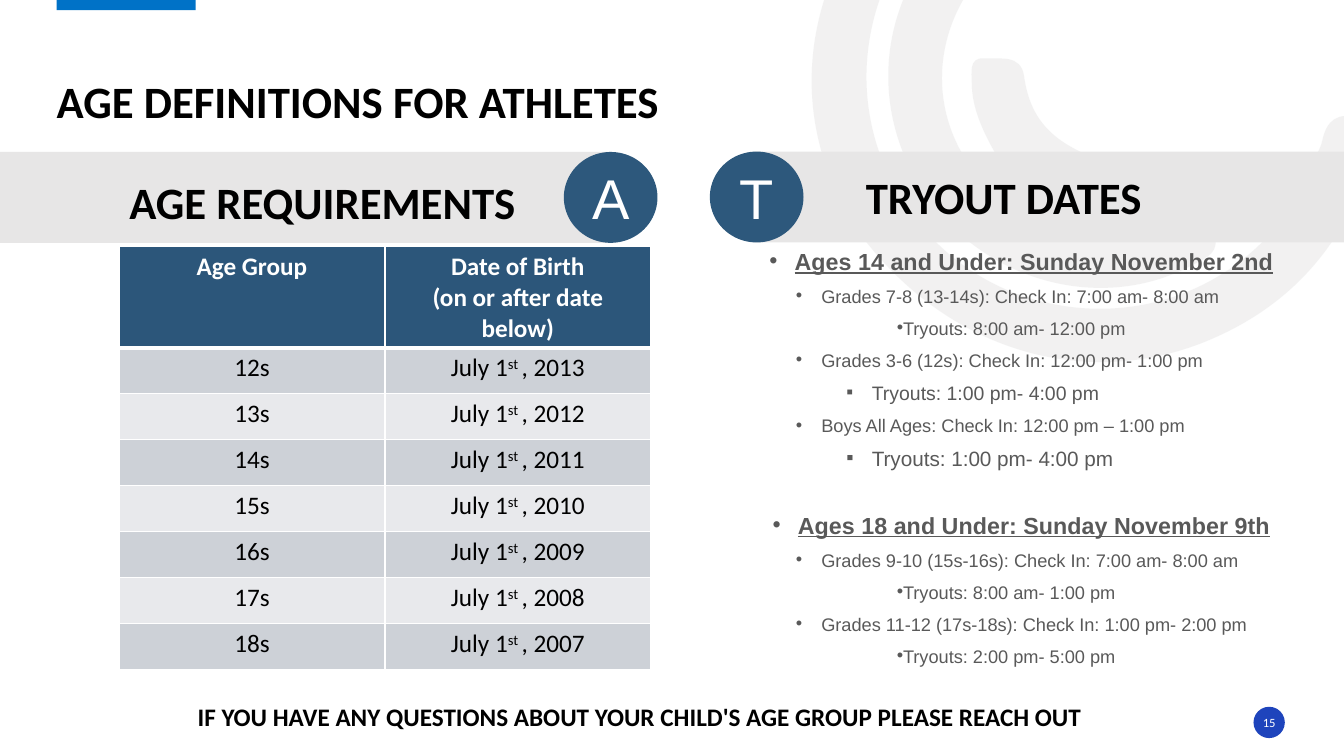
from lxml import etree
from pptx import Presentation
from pptx.dml.color import RGBColor
from pptx.enum.shapes import MSO_SHAPE
from pptx.enum.text import MSO_ANCHOR, PP_ALIGN
from pptx.oxml.ns import qn
from pptx.util import Cm, Pt

RECTANGLE, OVAL = MSO_SHAPE.RECTANGLE, MSO_SHAPE.OVAL
LEFT, CENTER = PP_ALIGN.LEFT, PP_ALIGN.CENTER
TOP, MIDDLE, BOTTOM = MSO_ANCHOR.TOP, MSO_ANCHOR.MIDDLE, MSO_ANCHOR.BOTTOM

BLACK = RGBColor(0x00, 0x00, 0x00)
WHITE = RGBColor(0xFF, 0xFF, 0xFF)
LIGHT_GREY = RGBColor(0xE7, 0xE6, 0xE6)
TEXT_GREY = RGBColor(0x59, 0x59, 0x59)
ACCENT_BLUE = RGBColor(0x00, 0x72, 0xC7)
NUMBER_BLUE = RGBColor(0x1E, 0x44, 0xBC)
BADGE_BLUE = RGBColor(0x2D, 0x58, 0x7C)
HEADER_BLUE = RGBColor(0x2C, 0x56, 0x7A)
ROW_FILLS = (RGBColor(0xCD, 0xD1, 0xD7), RGBColor(0xE8, 0xE9, 0xEC))

# Start point, then cubic curves as (control, control, end), in centimetres
OUTER_RING = ((21.62, 5.82), [
    ((20.29, 3.78), (19.99, 1.27), (21.29, -1.27)),
    ((22.61, -3.86), (24.79, -5.16), (27.69, -5.26)),
    ((28.07, -5.26), (28.47, -5.33), (28.73, -4.95)),
    ((29.06, -4.45), (28.63, -3.91), (27.89, -3.91)),
    ((24.56, -3.91), (21.97, -1.5), (21.84, 1.73)),
    ((21.74, 4.6), (23.77, 7.14), (26.57, 7.67)),
    ((29.46, 8.23), (32.26, 6.63), (33.2, 3.86)),
    ((33.25, 3.76), (33.3, 3.66), (33.32, 3.56)),
    ((33.43, 3.02), (33.71, 2.82), (34.26, 2.97)),
    ((34.87, 3.15), (34.72, 3.58), (34.57, 3.96)),
    ((33.88, 6.22), (32.46, 7.8), (30.25, 8.66)),
    ((27.18, 9.83), (23.77, 8.76), (21.62, 5.82))])
INNER_RING = ((23.42, 5.05), [
    ((21.89, 2.92), (22.07, 0.18), (23.88, -1.73)),
    ((24.16, -2.01), (24.43, -2.41), (24.89, -1.98)),
    ((25.27, -1.63), (25.32, -1.27), (24.87, -0.81)),
    ((23.5, 0.66), (23.37, 2.74), (24.51, 4.27)),
    ((25.6, 5.82), (27.64, 6.32), (29.49, 5.46)),
    ((30.02, 5.21), (30.3, 5.38), (30.56, 5.82)),
    ((30.81, 6.35), (30.4, 6.5), (30.05, 6.68)),
    ((27.84, 7.87), (24.97, 7.16), (23.42, 5.05))])
CORE = ((25.07, 3.84), [
    ((24.77, 3.3), (24.49, 2.72), (24.49, 2.08)),
    ((24.49, 1.85), (24.41, 1.45), (24.79, 1.47)),
    ((25.2, 1.5), (25.73, 1.35), (25.81, 1.93)),
    ((25.93, 2.79), (26.31, 3.35), (27.1, 3.76)),
    ((27.64, 3.99), (27.33, 4.47), (27.23, 4.8)),
    ((27.13, 5.23), (26.8, 5.03), (26.54, 4.93)),
    ((25.93, 4.75), (25.48, 4.32), (25.07, 3.84))])

# Bullet styles: level, left margin, indent, bullet, alignment
DAY = (0, Cm(0.64), Cm(-0.64), "•", CENTER)
GRADES = (1, Cm(1.91), Cm(-0.64), "•", LEFT)
SESSION = (1, Cm(2.54), Cm(1.27), "•", LEFT)
SQUARE_SESSION = (2, Cm(3.18), Cm(-0.64), "▪", LEFT)
DAY_SIZE, DETAIL_SIZE = 16.65, 12.95
SPACE_AFTER, DAY_GAP = 12, 34.8
TRYOUTS = [
    (DAY, DAY_SIZE, "Ages 14 and Under: Sunday November 2nd", SPACE_AFTER),
    (GRADES, DETAIL_SIZE, "Grades 7-8 (13-14s): Check In: 7:00 am- 8:00 am", SPACE_AFTER),
    (SESSION, DETAIL_SIZE, "Tryouts: 8:00 am- 12:00 pm", SPACE_AFTER),
    (GRADES, DETAIL_SIZE, "Grades 3-6 (12s): Check In: 12:00 pm- 1:00 pm", SPACE_AFTER),
    (SQUARE_SESSION, 13.9, "Tryouts: 1:00 pm- 4:00 pm", SPACE_AFTER),
    (GRADES, DETAIL_SIZE, "Boys All Ages: Check In: 12:00 pm – 1:00 pm", SPACE_AFTER),
    (SQUARE_SESSION, 14.8, "Tryouts: 1:00 pm- 4:00 pm", DAY_GAP),
    (DAY, DAY_SIZE, "Ages 18 and Under: Sunday November 9th", SPACE_AFTER),
    (GRADES, DETAIL_SIZE, "Grades 9-10 (15s-16s): Check In: 7:00 am- 8:00 am", SPACE_AFTER),
    (SESSION, DETAIL_SIZE, "Tryouts: 8:00 am- 1:00 pm", SPACE_AFTER),
    (GRADES, DETAIL_SIZE, "Grades 11-12 (17s-18s): Check In: 1:00 pm- 2:00 pm", SPACE_AFTER),
    (SESSION, DETAIL_SIZE, "Tryouts: 2:00 pm- 5:00 pm", SPACE_AFTER),
]


def set_font(font, size, color, bold=False, name="Calibri"):
    font.name, font.size, font.bold = name, Pt(size), bold
    font.color.rgb = color


def write(frame, text, size, color, bold=False, name="Calibri",
          align=LEFT, anchor=MIDDLE, spacing=None):
    """Fill a text frame, without insets, with one paragraph."""
    frame.word_wrap = True
    frame.vertical_anchor = anchor
    frame.margin_left = frame.margin_top = frame.margin_right = frame.margin_bottom = 0
    para = frame.paragraphs[0]
    para.text, para.alignment, para.line_spacing = text, align, spacing
    set_font(para.font, size, color, bold, name)


def paint(shape, color):
    """Give a shape a flat fill with no line or shadow."""
    shape.shadow.inherit = False
    shape.fill.solid()
    shape.fill.fore_color.rgb = color
    shape.line.fill.background()


def add_plain_shape(slide, kind, box, color):
    shape = slide.shapes.add_shape(kind, *box)
    paint(shape, color)
    return shape


def add_heading(slide, box, text):
    write(slide.shapes.add_textbox(*box).text_frame, text, 32, BLACK, True,
          anchor=BOTTOM, spacing=0.9)


def add_backdrop_curve(slide, start, curves):
    """Draw a closed, half-transparent outline from cubic curves."""
    builder = slide.shapes.build_freeform(Cm(start[0]), Cm(start[1]))
    builder.add_line_segments([(Cm(x), Cm(y)) for curve in curves for x, y in curve])
    shape = builder.convert_to_shape()
    paint(shape, LIGHT_GREY)
    properties = shape._element.spPr
    etree.SubElement(properties.find(qn("a:solidFill"))[0], qn("a:alpha"), val="53000")
    outline = next(properties.iter(qn("a:path")))
    segments = outline.findall(qn("a:lnTo"))
    for first in range(0, len(segments), 3):
        curve = etree.SubElement(outline, qn("a:cubicBezTo"))
        for segment in segments[first:first + 3]:
            curve.append(segment[0])
            outline.remove(segment)
    etree.SubElement(outline, qn("a:close"))


def add_section_banner(slide, box, title, heading_left, heading_box_size, badge_left):
    """Draw a grey band with its heading and a round badge holding the initial."""
    left, top, width, height = box
    add_plain_shape(slide, RECTANGLE, box, LIGHT_GREY)
    add_heading(slide, (left + heading_left, top, *heading_box_size), title)
    badge = add_plain_shape(slide, OVAL, (left + badge_left, top, Cm(2.36), height), BADGE_BLUE)
    write(badge.text_frame, title[0], 40, WHITE, name="Arial", align=CENTER)


def add_bottom_border(cell, color, width):
    border = etree.Element(qn("a:lnB"), w=str(Pt(width)))
    fill = etree.SubElement(border, qn("a:solidFill"))
    etree.SubElement(fill, qn("a:srgbClr"), val=str(color))
    cell._tc.get_or_add_tcPr().insert(0, border)


def add_age_table(slide, box):
    table = slide.shapes.add_table(8, 2, *box).table
    for row in table.rows:
        row.height = Cm(1.16)
    table.rows[0].height = Cm(2.41)
    headers = ("Age Group", "Date of Birth\n(on or after date below)")
    for column, text in enumerate(headers):
        table.cell(0, column).text = text
        add_bottom_border(table.cell(0, column), WHITE, 3)
    for row in range(1, 8):
        age = 11 + row
        table.cell(row, 0).text = f"{age}s"
        para = table.cell(row, 1).text_frame.paragraphs[0]
        for text in ("July 1", "st ", f", {2025 - age}"):
            span = para.add_run()
            span.text = text
            if text == "st ":
                span.font._element.set("baseline", "30000")
    for row in range(8):
        for cell in table.rows[row].cells:
            cell.fill.solid()
            cell.fill.fore_color.rgb = ROW_FILLS[(row - 1) % 2] if row else HEADER_BLUE
            for para in cell.text_frame.paragraphs:
                para.alignment = CENTER
                set_font(para.font, 18, BLACK if row else WHITE, row == 0)


def add_tryout_list(slide, box):
    frame = slide.shapes.add_textbox(*box).text_frame
    frame.word_wrap = True
    frame.vertical_anchor = TOP
    for index, (style, size, text, space_after) in enumerate(TRYOUTS):
        level, margin, indent, bullet, align = style
        para = frame.add_paragraph() if index else frame.paragraphs[0]
        para.text, para.level, para.alignment = text, level, align
        para.line_spacing, para.space_after = 0.7, Pt(space_after)
        properties = para._p.get_or_add_pPr()
        properties.set("marL", str(margin))
        properties.set("indent", str(indent))
        etree.SubElement(properties, qn("a:buFont"), typeface="Arial")
        etree.SubElement(properties, qn("a:buChar"), char=bullet)
        set_font(para.font, size, TEXT_GREY, style is DAY, "Arial")
        para.font.underline = style is DAY


def add_footer(slide, box, text, number):
    left, top, width, height = box
    note = slide.shapes.add_textbox(left, top, Cm(24), height)
    write(note.text_frame, text, 18, BLACK, True)
    size = Cm(0.79)
    disc = add_plain_shape(slide, OVAL, (left + width - size, top + Cm(0.26), size, size), NUMBER_BLUE)
    write(disc.text_frame, number, 9, WHITE, align=CENTER)


def main():
    deck = Presentation()
    deck.slide_width, deck.slide_height = Cm(33.87), Cm(19.05)
    slide = deck.slides.add_slide(deck.slide_layouts[6])
    for start, curves in (OUTER_RING, INNER_RING, CORE):
        add_backdrop_curve(slide, start, curves)
    add_plain_shape(slide, RECTANGLE, (Cm(1.43), 0, Cm(3.5), Cm(0.26)), ACCENT_BLUE)
    add_heading(slide, (Cm(1.43), Cm(0.67), Cm(30.96), Cm(2.57)), "AGE DEFINITIONS FOR ATHLETES")
    add_section_banner(slide, (0, Cm(3.83), Cm(15.39), Cm(2.29)), "AGE REQUIREMENTS",
                       Cm(3.26), (Cm(10.9), Cm(1.94)), Cm(14.21))
    add_section_banner(slide, (Cm(19.02), Cm(3.82), Cm(14.85), Cm(2.29)), "TRYOUT DATES",
                       Cm(2.8), (Cm(12), Cm(1.84)), Cm(-1.13))
    add_age_table(slide, (Cm(3), Cm(6.22), Cm(13.4), Cm(10.53)))
    add_tryout_list(slide, (Cm(18.54), Cm(6.3), Cm(14.4), Cm(11.68)))
    add_footer(slide, (Cm(4.98), Cm(17.55), Cm(27.4), Cm(1.02)),
               "IF YOU HAVE ANY QUESTIONS ABOUT YOUR CHILD'S AGE GROUP PLEASE REACH OUT", "15")
    deck.save("out.pptx")


if __name__ == "__main__":
    main()
